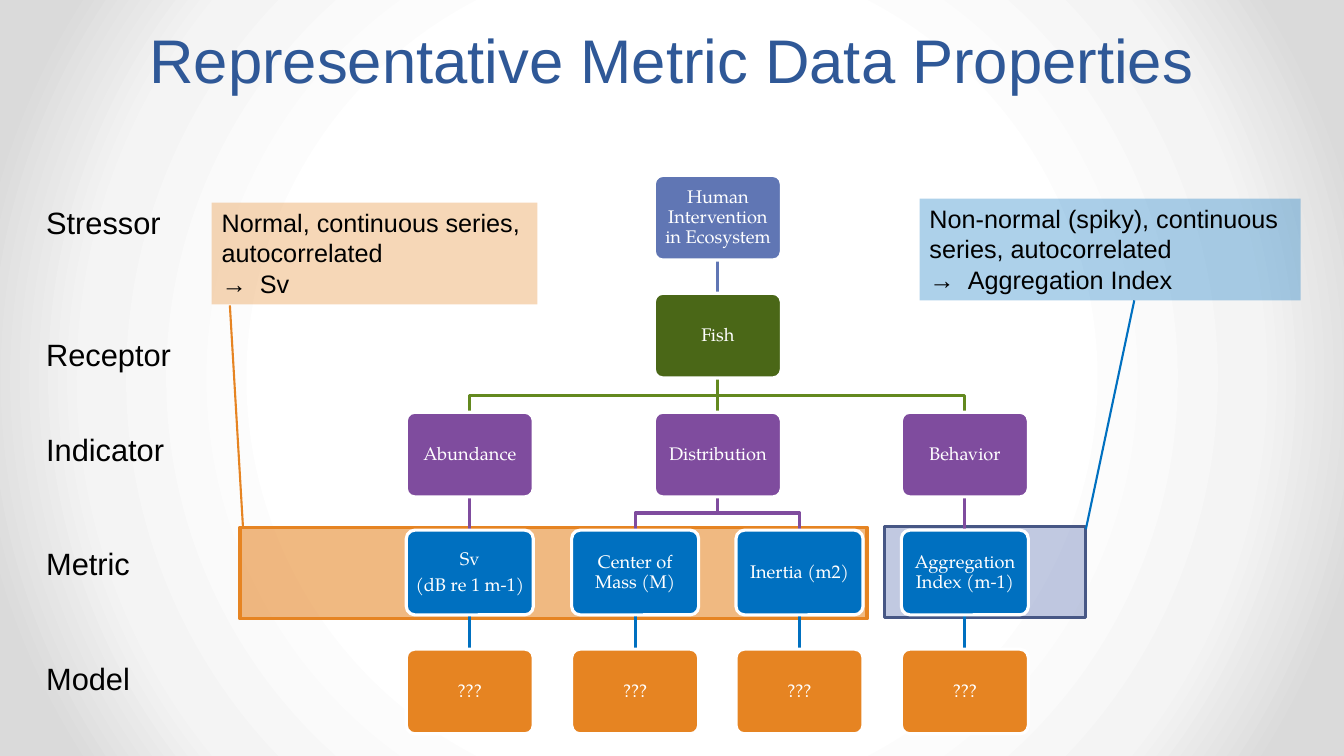
from lxml.etree import SubElement as Sub
from pptx import Presentation
from pptx.dml.color import RGBColor as Rgb
from pptx.enum.shapes import MSO_CONNECTOR as Link, MSO_SHAPE as Form
from pptx.enum.text import MSO_ANCHOR as Anchor, PP_ALIGN as Align
from pptx.oxml import parse_xml
from pptx.oxml.ns import nsdecls, qn
from pptx.util import Pt

PX = 9144
INK = {
    "black": "000000", "white": "FFFFFF", "title": "2F5897",
    "blue": "6076B4", "navy": "475785", "sky": "0070C0",
    "moss": "4A6717", "leaf": "63891F", "plum": "7F4C9E",
    "orange": "E68422", "pale": "F4F4F4", "grey": "DADADA",
}
FILLS = ["blue", "moss", "plum", "sky", "orange"]
LINES = ["blue", "leaf", "plum", "sky"]
WIDE, HIGH = 126, 84


class Board:
    def __init__(self, slide):
        self.slide = slide
        self.shapes = slide.shapes
        self.sans = "Arial"
        self.serif = "TeX Gyre Pagella"

    def glow(self, stops):
        self.slide.background.fill.solid()
        back = self.slide.element.find(".//" + qn("p:bgPr"))
        marks = "".join(
            f'<a:gs pos="{pos * 1000}"><a:srgbClr val="{INK[ink]}"/></a:gs>'
            for pos, ink in stops)
        back.replace(back[0], parse_xml(
            f'<a:gradFill {nsdecls("a")} rotWithShape="1"><a:gsLst>{marks}</a:gsLst>'
            '<a:path path="circle"><a:fillToRect l="50000" t="50000" r="50000" b="50000"/>'
            '</a:path></a:gradFill>'))

    def letter(self, shape, text, size=18, font=None, ink="black", align=Align.LEFT,
               anchor=Anchor.TOP, pad=(10, 5), space=None, after=0, tab=38):
        frame = shape.text_frame
        frame.word_wrap = True
        frame.vertical_anchor = anchor
        frame.margin_left = frame.margin_right = pad[0] * PX
        frame.margin_top = frame.margin_bottom = pad[1] * PX
        for i, line in enumerate(text.split("\n")):
            para = frame.add_paragraph() if i else frame.paragraphs[0]
            para.alignment = align
            para.space_after = Pt(after)
            if space:
                para.line_spacing = space
            if "\t" in line:
                stops = Sub(para._p.get_or_add_pPr(), qn("a:tabLst"))
                Sub(stops, qn("a:tab"), pos=str(tab * PX), algn="l")
            run = para.add_run()
            run.text = line
            run.font.size = Pt(size)
            run.font.name = font or self.sans
            run.font.color.rgb = Rgb.from_string(INK[ink])

    def label(self, x, y, w, h, text, **style):
        self.letter(self.shapes.add_textbox(x * PX, y * PX, w * PX, h * PX), text, **style)

    def stroke(self, shape, ink, width):
        shape.line.color.rgb = Rgb.from_string(INK[ink])
        shape.line.width = Pt(width)

    def box(self, x, y, w, h, fill, line=None, alpha=None, form=Form.RECTANGLE):
        shape = self.shapes.add_shape(form, x * PX, y * PX, w * PX, h * PX)
        shape.shadow.inherit = False
        shape.fill.solid()
        shape.fill.fore_color.rgb = Rgb.from_string(INK[fill])
        if alpha:
            tint = shape.element.spPr.find(".//" + qn("a:srgbClr"))
            Sub(tint, qn("a:alpha"), val=str(alpha * 1000))
        if line:
            self.stroke(shape, line, 2.25)
        else:
            shape.line.fill.background()
        return shape

    def line(self, x1, y1, x2, y2, ink, width):
        wire = self.shapes.add_connector(Link.STRAIGHT, x1 * PX, y1 * PX, x2 * PX, y2 * PX)
        self.stroke(wire, ink, width)
        Sub(wire.element.spPr, qn("a:effectLst"))

    def branch(self, x1, y1, x2, y2, ink):
        if x1 == x2:
            self.line(x1, y1, x2, y2, ink, 2.25)
            return
        mid = (y1 + y2) // 2
        pen = self.shapes.build_freeform(x1, y1, scale=PX)
        pen.add_line_segments([(x1, mid), (x2, mid), (x2, y2)], close=False)
        bend = pen.convert_to_shape()
        bend.shadow.inherit = False
        bend.fill.background()
        self.stroke(bend, ink, 2.25)

    def node(self, x, y, text, fill):
        shape = self.box(x, y, WIDE, HIGH, fill, "white", form=Form.ROUNDED_RECTANGLE)
        shape.adjustments[0] = 0.1
        self.letter(shape, text, size=13, font=self.serif, ink="white", align=Align.CENTER,
                    anchor=Anchor.MIDDLE, pad=(5, 5), space=0.9, after=4.5)

    def note(self, band, wire, frame, text, fill, edge, ink, alpha):
        self.box(*band, fill, edge, alpha)
        self.line(*wire, ink, 1.5)
        self.letter(self.box(*frame, ink, alpha=32), text)


def place(row, col):
    return 403 + round(491 * col / 3), 174 + 235 * row // 2


def main():
    deck = Presentation()
    deck.slide_width, deck.slide_height = 1333 * PX, 750 * PX
    board = Board(deck.slides.add_slide(deck.slide_layouts[6]))
    board.glow([(50, "white"), (76, "pale"), (92, "grey")])

    board.note((238, 523, 622, 91), (241, 523, 228, 303), (210, 201, 323, 101),
               "Normal, continuous series, autocorrelated\n→\tSv",
               "orange", "orange", "orange", 57)
    board.note((877, 522, 200, 91), (1077, 525, 1125, 298), (912, 197, 378, 101),
               "Non-normal (spiky), continuous series, autocorrelated\n→\tAggregation Index",
               "blue", "navy", "sky", 39)

    board.label(122, 0, 1089, 100, "Representative Metric Data Properties", size=44,
                ink="title", align=Align.CENTER, anchor=Anchor.BOTTOM, space=Pt(58))
    levels = {"Stressor": 197, "Receptor": 328, "Indicator": 422, "Metric": 536, "Model": 650}
    for name, y in levels.items():
        board.label(36, y, 211, 47, name, size=22)

    tree = [
        {1.5: "Human Intervention in Ecosystem"},
        {1.5: "Fish"},
        {0: "Abundance", 1.5: "Distribution", 3: "Behavior"},
        {0: "Sv\n(dB re 1 m-1)", 1: "Center of Mass (M)", 2: "Inertia (m2)",
         3: "Aggregation Index (m-1)"},
        dict.fromkeys(range(4), "???"),
    ]
    for row, ink in enumerate(LINES):
        for col in tree[row + 1]:
            root = min(tree[row], key=lambda spot: abs(spot - col))
            x1, y1 = place(row, root)
            x2, y2 = place(row + 1, col)
            board.branch(x1 + WIDE // 2, y1 + HIGH, x2 + WIDE // 2, y2, ink)
    for row, nodes in enumerate(tree):
        for col, text in nodes.items():
            board.node(*place(row, col), text, FILLS[row])

    deck.save("out.pptx")


if __name__ == "__main__":
    main()
